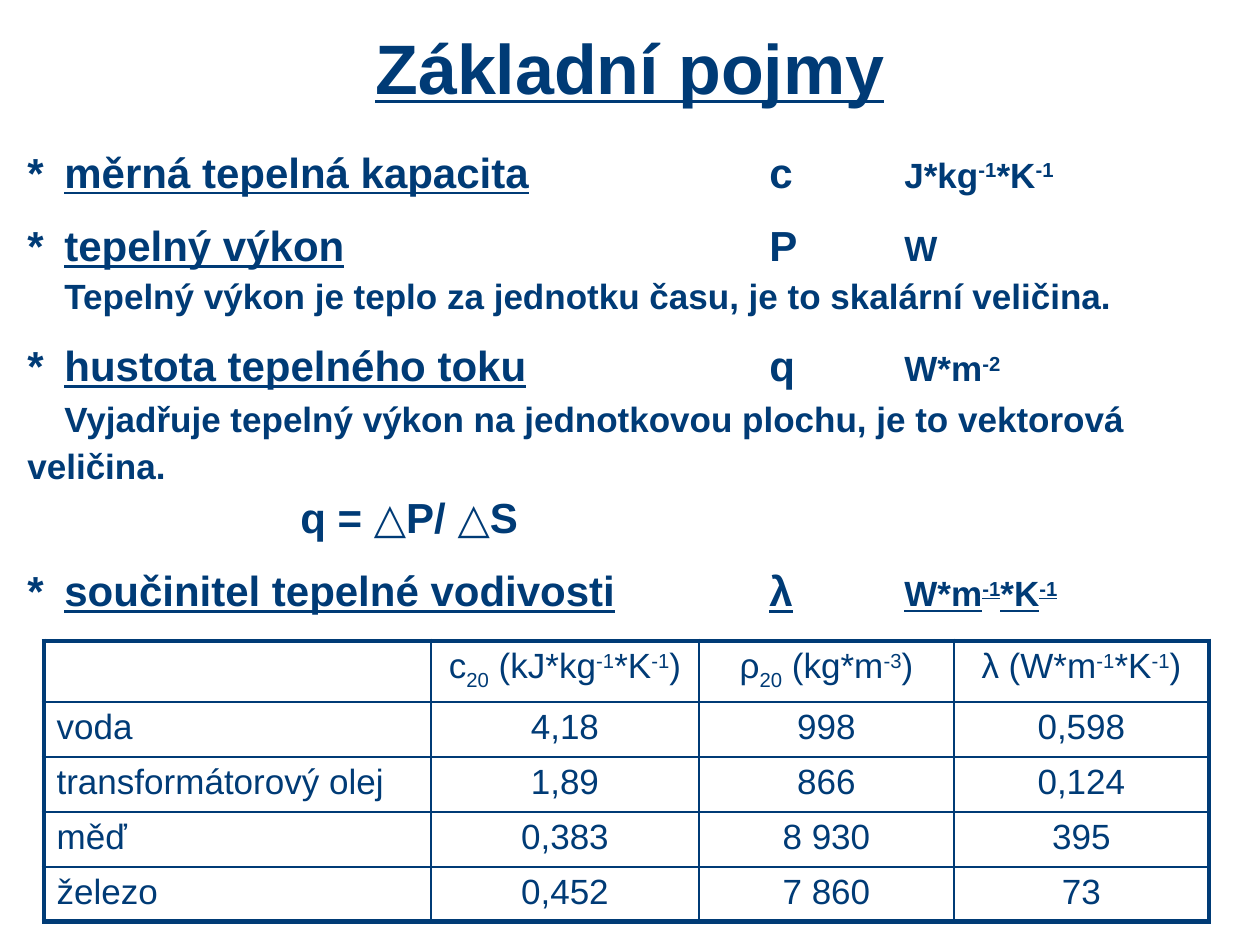
from lxml import etree
from pptx import Presentation
from pptx.dml.color import RGBColor
from pptx.enum.text import MSO_ANCHOR, PP_ALIGN
from pptx.oxml.ns import qn
from pptx.util import Emu, Pt

CENTER, LEFT = PP_ALIGN.CENTER, PP_ALIGN.LEFT
MIDDLE, TOP = MSO_ANCHOR.MIDDLE, MSO_ANCHOR.TOP
COLORS = {"navy": "003B76", "white": "FFFFFF"}
FONT = "Arial"
PX = 914400 // 126  # EMU in one px
BASELINES = {"^": "30000", "~": "-25000"}

# Content: "|" separates pieces, "^" starts a superscript, "~" a subscript
TITLE = "Základní pojmy"
BIG, SMALL, GAP = 24, 20, 10.5


def term(name, symbol, unit, underlined=False):
    return GAP, [("*\t", BIG, False), (name, BIG, True), ("\t", BIG, False),
                 (symbol, BIG, underlined), ("\t", BIG, False),
                 (unit, SMALL, underlined)]


# Each paragraph: space before in points, then (text, size, underlined)
PARAGRAPHS = [
    term("měrná tepelná kapacita", "c", "J*kg|^-1|*K|^-1"),
    term("tepelný výkon", "P", "W"),
    (0, [("\tTepelný výkon je teplo za jednotku času, je to skalární veličina.",
          SMALL, False)]),
    term("hustota tepelného toku", "q", "W*m|^-2"),
    (2, [("\tVyjadřuje tepelný výkon na jednotkovou plochu, je to vektorová veličina.",
          SMALL, False)]),
    (0, [("\t\tq = △P/ △S", BIG, False)]),
    term("součinitel tepelné vodivosti", "λ", "W*m|^-1|*K|^-1", True),
]
TAB_STOPS = [37, 273, 742, 877]

ROWS = [
    ["", "c|~20| (kJ*kg|^-1|*K|^-1|)", "ρ|~20| (kg*m|^-3|)", "λ (W*m|^-1|*K|^-1|)"],
    ["voda", "4,18", "998", "0,598"],
    ["transformátorový olej", "1,89", "866", "0,124"],
    ["měď", "0,383", "8 930", "395"],
    ["železo", "0,452", "7 860", "73"],
]
COLUMN_WIDTHS = [387, 268, 255, 255]
ROW_HEIGHTS = [61, 55, 55, 55, 55]


def px(*lengths):
    return [Emu(length * PX) for length in lengths]


def add_runs(paragraph, text, size, bold=False, underlined=False):
    for piece in text.split("|"):
        baseline = BASELINES.get(piece[:1])
        run = paragraph.add_run()
        run.text = piece[1:] if baseline else piece
        font = run.font
        font.name, font.size = FONT, Pt(size)
        font.bold, font.underline = bold, underlined
        font.color.rgb = RGBColor.from_string(COLORS["navy"])
        if baseline:
            run._r.get_or_add_rPr().set("baseline", baseline)


def add_text_frame(slide, box, anchor):
    text_frame = slide.shapes.add_textbox(*px(*box)).text_frame
    text_frame.word_wrap = True
    text_frame.vertical_anchor = anchor
    return text_frame


def set_tab_stops(paragraph):
    tab_list = etree.SubElement(paragraph._p.get_or_add_pPr(), qn("a:tabLst"))
    for stop in TAB_STOPS:
        etree.SubElement(tab_list, qn("a:tab"), pos=str(stop * PX), algn="l")


def set_borders(cell, widths):
    properties = cell._tc.get_or_add_tcPr()
    for index, (side, width) in enumerate(widths.items()):
        line = etree.Element(qn(f"a:ln{side}"), w=str(Pt(width)))
        fill = etree.SubElement(line, qn("a:solidFill"))
        etree.SubElement(fill, qn("a:srgbClr"), val=COLORS["navy"])
        properties.insert(index, line)


def add_title(slide):
    paragraph = add_text_frame(slide, (63, 16, 1134, 100), MIDDLE).paragraphs[0]
    paragraph.alignment = CENTER
    add_runs(paragraph, TITLE, 40, bold=True, underlined=True)


def add_terms(slide):
    text_frame = add_text_frame(slide, (15, 135, 1230, 477), TOP)
    for index, (space, pieces) in enumerate(PARAGRAPHS):
        paragraph = text_frame.add_paragraph() if index else text_frame.paragraphs[0]
        paragraph.line_spacing = 1.1
        paragraph.space_before = Pt(space if index else 0)
        set_tab_stops(paragraph)
        for text, size, underlined in pieces:
            add_runs(paragraph, text, size, True, underlined)


def add_material_table(slide):
    last_row, last_column = len(ROWS) - 1, len(COLUMN_WIDTHS) - 1
    table = slide.shapes.add_table(
        len(ROWS), len(COLUMN_WIDTHS),
        *px(44, 641, sum(COLUMN_WIDTHS), sum(ROW_HEIGHTS))).table
    table.first_row = table.horz_banding = False
    for column, width in zip(table.columns, COLUMN_WIDTHS):
        column.width = Emu(width * PX)
    for row, height in zip(table.rows, ROW_HEIGHTS):
        row.height = Emu(height * PX)
    for r, values in enumerate(ROWS):
        for c, value in enumerate(values):
            cell = table.cell(r, c)
            cell.fill.solid()
            cell.fill.fore_color.rgb = RGBColor.from_string(COLORS["white"])
            paragraph = cell.text_frame.paragraphs[0]
            paragraph.alignment = CENTER if c else LEFT
            if value:
                add_runs(paragraph, value, SMALL)
            # Thick frame outside, thin lines inside
            outer = {"L": c == 0, "R": c == last_column,
                     "T": r == 0, "B": r == last_row}
            set_borders(cell, {side: 3 if edge else 1 for side, edge in outer.items()})


def main():
    presentation = Presentation()
    presentation.slide_width, presentation.slide_height = px(1260, 945)
    slide = presentation.slides.add_slide(presentation.slide_layouts[6])
    add_title(slide)
    add_terms(slide)
    add_material_table(slide)
    presentation.save("out.pptx")


if __name__ == "__main__":
    main()
